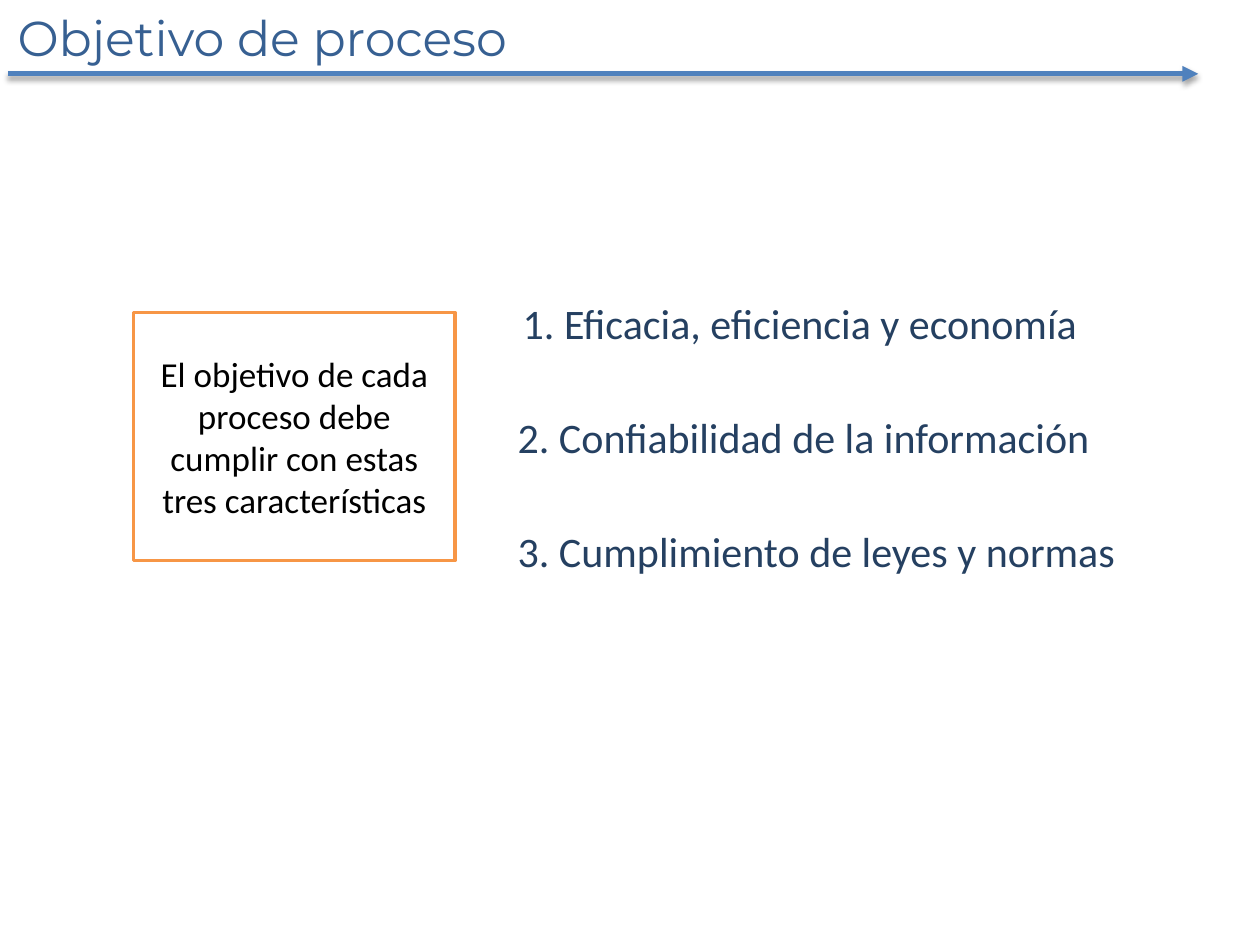
from lxml import etree
from pptx import Presentation
from pptx import util as u
from pptx.dml.color import RGBColor
from pptx.enum import shapes, text
from pptx.oxml import ns

NAVY = RGBColor(0x25, 0x40, 0x61)
BLUE = RGBColor(0x37, 0x60, 0x92)
ARROW_BLUE = RGBColor(0x4F, 0x81, 0xBD)
ORANGE = RGBColor(0xF7, 0x96, 0x46)
WHITE = RGBColor(0xFF, 0xFF, 0xFF)
BLACK = RGBColor(0x00, 0x00, 0x00)

ITEM = {"name": "Calibri", "size": u.Pt(24)}
BOX = {"name": "Calibri", "size": u.Pt(20)}
TITLE = {"name": "Montserrat", "size": u.Pt(28)}


def sub(parent, tag, **attrs):
    return etree.SubElement(parent, ns.qn(tag), attrs)


class Deck:
    def __init__(self, width, height):
        self.prs = Presentation()
        self.prs.slide_width, self.prs.slide_height = u.Pt(width), u.Pt(height)
        self.s = self.prs.slides.add_slide(self.prs.slide_layouts[6])

    def set_text(self, sp, words, style, color, **frame):
        tf = sp.text_frame
        for key, value in frame.items():
            setattr(tf, key, value)
        p = tf.paragraphs[0]
        r = p.add_run()
        r.text = words
        for key, value in style.items():
            setattr(r.font, key, value)
        r.font.color.rgb = color
        return p

    def label(self, words, at, style, color, wrap):
        sp = self.s.shapes.add_textbox(*map(u.Pt, at))
        self.set_text(sp, words, style, color, word_wrap=wrap,
                      auto_size=text.MSO_AUTO_SIZE.SHAPE_TO_FIT_TEXT)

    def box(self, words, at, style, color, fill, line):
        sp = self.s.shapes.add_shape(shapes.MSO_SHAPE.RECTANGLE, *map(u.Pt, at))
        sp.shadow.inherit = False
        sp.fill.solid()
        sp.fill.fore_color.rgb = fill
        sp.line.color.rgb = line
        sp.line.width = u.Pt(2)
        p = self.set_text(sp, words, style, color, word_wrap=True,
                          vertical_anchor=text.MSO_ANCHOR.MIDDLE)
        p.alignment = text.PP_ALIGN.CENTER

    def arrow(self, ends, color, width):
        sp = self.s.shapes.add_connector(
            shapes.MSO_CONNECTOR.STRAIGHT, *map(u.Pt, ends))
        sp.line.color.rgb = color
        sp.line.width = u.Pt(width)
        props = sp._element.spPr
        sub(props.find(ns.qn("a:ln")), "a:tailEnd", type="triangle")
        effects = sub(props, "a:effectLst")
        shadow = sub(effects, "a:outerShdw", blurRad=str(u.Pt(3.1)),
                     dist=str(u.Pt(1.8)), dir="5400000", rotWithShape="0")
        sub(sub(shadow, "a:srgbClr", val=str(BLACK)), "a:alpha", val="35000")


def main():
    deck = Deck(720, 540)
    items = [
        ("1. Eficacia, eficiencia y economía", 291.6, 339.8),
        ("2. Confiabilidad de la información", 288.7, 344.2),
        ("3. Cumplimiento de leyes y normas", 288.7, 358.6),
    ]
    for i, (words, left, width) in enumerate(items):
        deck.label(words, (left, 166.4 + 65.2 * i, width, 36), ITEM, NAVY, False)
    deck.box("El objetivo de cada proceso debe cumplir con estas tres características",
             (76.4, 178.6, 183.6, 141.8), BOX, BLACK, WHITE, ORANGE)
    deck.arrow((4.5, 42.2, 684.7, 42.2), ARROW_BLUE, 3)
    deck.label("Objetivo de proceso", (3, 0.7, 573.8, 41), TITLE, BLUE, True)
    deck.prs.save("out.pptx")


if __name__ == "__main__":
    main()
